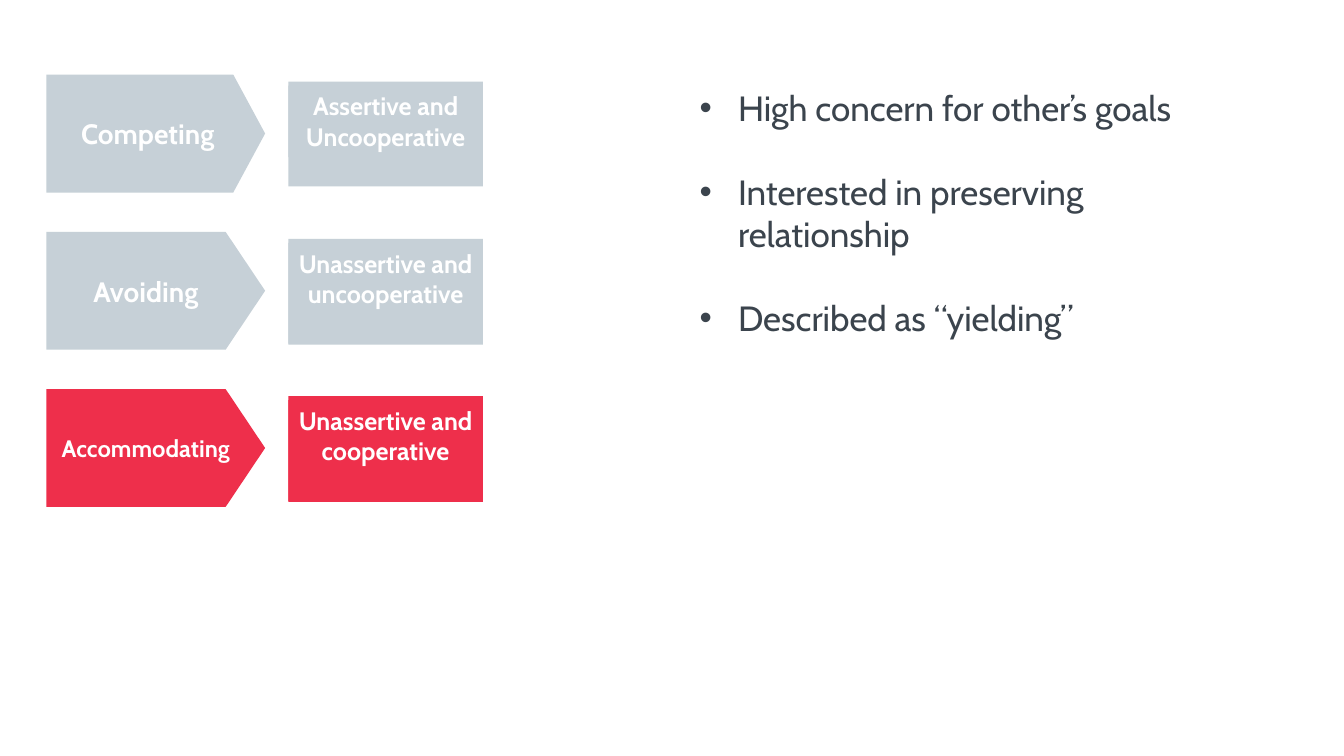
import dataclasses
import typing

import pptx
import pptx.dml.color
import pptx.enum.shapes
import pptx.enum.text
import pptx.util

Inches = pptx.util.Inches
Pt = pptx.util.Pt
Shape = pptx.enum.shapes.MSO_SHAPE
Align = pptx.enum.text.PP_ALIGN
Anchor = pptx.enum.text.MSO_ANCHOR
Fit = pptx.enum.text.MSO_AUTO_SIZE

FONT = "Cabin"
WHITE, GREY, RED, INK = "FFFFFF", "C6D0D7", "EE2F4B", "3B444D"
TOP, PITCH = 0.74, 1.56
HANG = 0.38


@dataclasses.dataclass
class Style:
    name: str
    trait: str
    color: str = GREY
    size: int = 20
    point: float = 0.335
    depth: float = 1.01


STYLES = [
    Style("Competing", "Assertive and Uncooperative", point=0.27, depth=0.71),
    Style("Avoiding", "Unassertive and uncooperative"),
    Style("Accommodating", "Unassertive and cooperative", color=RED, size=17),
]
NOTES = [
    "High concern for other’s goals",
    "Interested in preserving relationship",
    "Described as “yielding”",
]


def rgb(code: str) -> pptx.dml.color.RGBColor:
    return pptx.dml.color.RGBColor.from_string(code)


def apply(item: typing.Any, values: dict[str, typing.Any]) -> None:
    for key, value in values.items():
        setattr(item, key, value)


def set_font(font: typing.Any, size: int, color: str, bold: bool) -> None:
    apply(font, {"name": FONT, "size": Pt(size), "bold": bold})
    font.color.rgb = rgb(color)


def add_block(shapes: typing.Any, kind: Shape, box: tuple[float, ...], color: str) -> typing.Any:
    block = shapes.add_shape(kind, *map(Inches, box))
    block.shadow.inherit = False
    block.fill.solid()
    block.fill.fore_color.rgb = rgb(color)
    block.line.fill.background()
    return block


def add_text(block: typing.Any, text: str, size: int, anchor: Anchor) -> None:
    frame = block.text_frame
    apply(frame, {"text": text, "word_wrap": True, "vertical_anchor": anchor})
    line = frame.paragraphs[0]
    line.alignment = Align.CENTER
    set_font(line.runs[0].font, size, WHITE, True)


def add_style(shapes: typing.Any, style: Style, top: float) -> None:
    arrow = add_block(shapes, Shape.PENTAGON, (0.46, top, 2.17, 1.17), style.color)
    arrow.adjustments[0] = style.point
    add_text(arrow, style.name, style.size, Anchor.MIDDLE)

    card = shapes.add_group_shape().shapes
    add_block(card, Shape.RECTANGLE, (2.86, top + 0.07, 1.93, 1.04), style.color)
    label = add_block(card, Shape.RECTANGLE, (2.86, top + 0.11, 1.93, style.depth), style.color)
    add_text(label, style.trait, 18, Anchor.TOP)


def fill_body(body: typing.Any, notes: list[str]) -> None:
    apply(body, {"left": Inches(6.84), "top": Inches(0.81),
                 "width": Inches(4.97), "height": Inches(5.47)})
    frame = body.text_frame
    apply(frame, {"text": "\n".join(notes), "word_wrap": True,
                  "auto_size": Fit.NONE, "vertical_anchor": Anchor.TOP})
    for line in frame.paragraphs:
        apply(line, {"space_before": Pt(0), "space_after": Pt(30), "alignment": Align.LEFT})
        props = line._p.get_or_add_pPr()
        props.set("marL", str(Inches(HANG)))
        props.set("indent", str(-Inches(HANG)))
        set_font(line.runs[0].font, 25, INK, False)


def main() -> None:
    deck = pptx.Presentation()
    apply(deck, {"slide_width": Inches(13.33), "slide_height": Inches(7.5)})
    slide = deck.slides.add_slide(deck.slide_layouts[1])
    title = slide.shapes.title.element
    title.getparent().remove(title)
    fill_body(slide.placeholders[1], NOTES)
    for row, style in enumerate(STYLES):
        add_style(slide.shapes, style, TOP + row * PITCH)
    deck.save("out.pptx")


if __name__ == "__main__":
    main()
